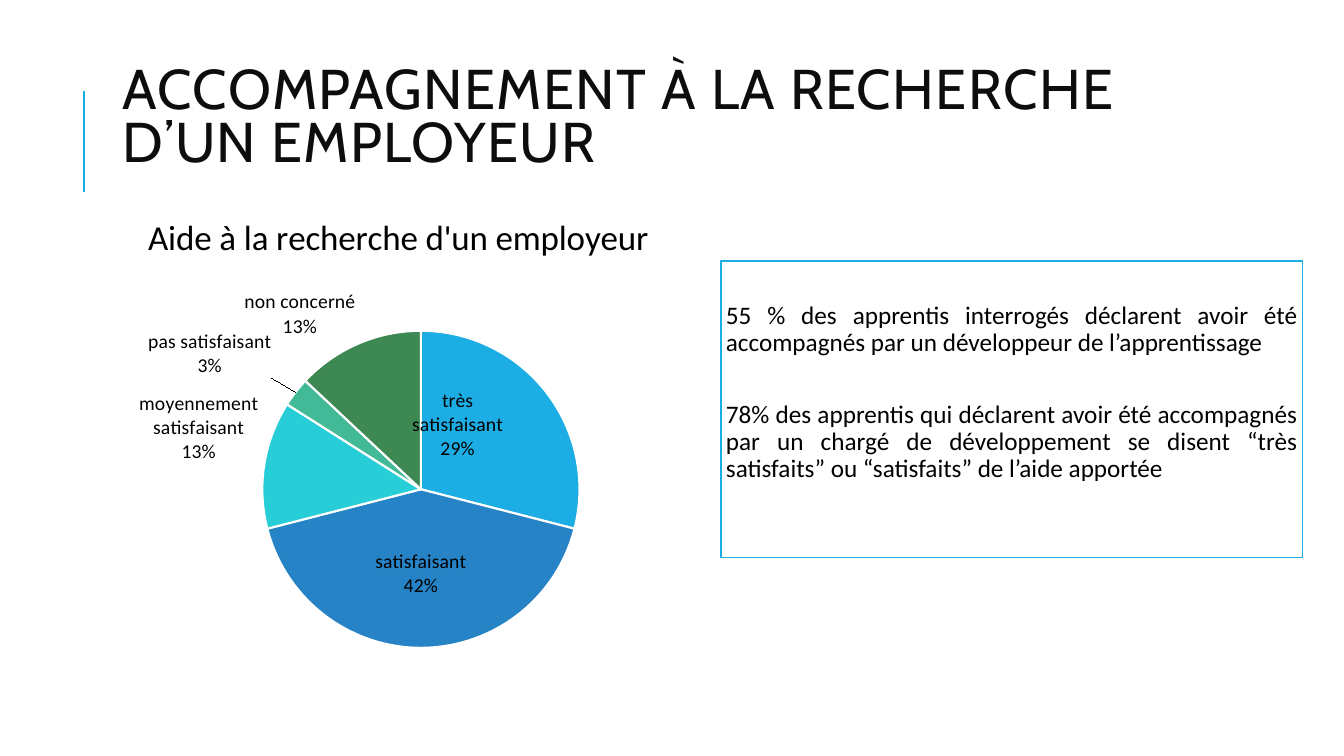
from lxml.etree import SubElement
from pptx import Presentation
from pptx.chart.data import CategoryChartData
from pptx.dml.color import RGBColor
from pptx.enum.chart import XL_CHART_TYPE, XL_LABEL_POSITION
from pptx.enum.shapes import MSO_CONNECTOR, MSO_SHAPE
from pptx.enum.text import MSO_ANCHOR, PP_ALIGN
from pptx.oxml import parse_xml
from pptx.oxml.ns import nsdecls, qn
from pptx.util import Inches, Pt

ACCENT = "1CADE4"
INSIDE, OUTSIDE = XL_LABEL_POSITION.CENTER, XL_LABEL_POSITION.OUTSIDE_END
ANSWERS = [
    ("très satisfaisant", 0.29, "1CADE4", INSIDE, (-0.04, -0.03)),
    ("satisfaisant", 0.42, "2683C6", INSIDE, (0, 0.01)),
    ("moyennement satisfaisant", 0.13, "27CED7", OUTSIDE, None),
    ("pas satisfaisant", 0.03, "42BA97", OUTSIDE, (-0.03, -0.02)),
    ("non concerné", 0.13, "3E8853", OUTSIDE, None),
]
FINDINGS = [
    "55 % des apprentis interrogés déclarent avoir été accompagnés par un "
    "développeur de l’apprentissage",
    "78% des apprentis qui déclarent avoir été accompagnés par un chargé de "
    "développement se disent “très satisfaits” ou “satisfaits” de l’aide apportée",
]


def color(code):
    """Turn a hex string into a colour."""
    return RGBColor.from_string(code)


def style_font(font, size, name="Calibri", code="000000"):
    """Set the face, size and colour of a font."""
    font.name, font.size, font.bold = name, Pt(size), False
    font.color.rgb = color(code)


def write_paragraph(para, text, *, size, name="Calibri", code="000000", align=PP_ALIGN.LEFT,
                    line=0.9, before=0, after=0, tracking=0):
    """Fill a paragraph with one formatted span."""
    para.alignment, para.line_spacing = align, line
    para.space_before, para.space_after = Pt(before), Pt(after)
    span = para.add_run()
    span.text = text
    style_font(span.font, size, name, code)
    if tracking:
        span.font._element.set("spc", str(tracking * 100))


def add_title(page, text):
    """Add the heading and its accent rule."""
    rule = page.shapes.add_connector(
        MSO_CONNECTOR.STRAIGHT, Inches(0.83), Inches(1.9), Inches(0.83), Inches(0.9))
    rule.line.color.rgb, rule.line.width = color(ACCENT), Pt(1.5)
    SubElement(rule._element.spPr, qn("a:effectLst"))
    box = page.shapes.add_textbox(Inches(1.12), Inches(0.37), Inches(10.63), Inches(1.64))
    frame = box.text_frame
    frame.word_wrap, frame.vertical_anchor = True, MSO_ANCHOR.MIDDLE
    write_paragraph(frame.paragraphs[0], text, size=40, name="Cabin", code="0D0D0D",
                    line=0.8, tracking=1)


def add_findings(page, findings):
    """Add the outlined box of findings."""
    box = page.shapes.add_shape(
        MSO_SHAPE.RECTANGLE, Inches(7.15), Inches(2.59), Inches(5.77), Inches(2.94))
    box.shadow.inherit = False
    box.fill.solid()
    box.fill.fore_color.rgb = color("FFFFFF")
    box.line.color.rgb, box.line.width = color(ACCENT), Pt(1.25)
    frame = box.text_frame
    frame.word_wrap, frame.vertical_anchor = True, MSO_ANCHOR.TOP
    frame.margin_left = frame.margin_right = frame.margin_bottom = Inches(0.05)
    frame.margin_top = Inches(0.41)
    for index, text in enumerate(findings):
        para = frame.add_paragraph() if index else frame.paragraphs[0]
        write_paragraph(para, text, size=18, align=PP_ALIGN.JUSTIFY,
                        before=26 if index else 0, after=6)


def manual_layout(x, y, width=None, height=None):
    """Build a chart layout, as an offset or as a full inner area."""
    parts = [("x", x), ("y", y)]
    if width:
        parts = [("layoutTarget", "inner"), ("xMode", "edge"), ("yMode", "edge"),
                 *parts, ("w", width), ("h", height)]
    body = "".join(f'<c:{tag} val="{value}"/>' for tag, value in parts)
    return parse_xml(
        f'<c:layout {nsdecls("c")}><c:manualLayout>{body}</c:manualLayout></c:layout>')


def label_slice(label, position, offset):
    """Show category and value on a slice, moved by the offset."""
    style_font(label.font, 14)
    label.position = position
    element = label._dLbl
    element.find(qn("c:showCatName")).set("val", "1")
    element.find(qn("c:showVal")).set("val", "1")
    element.find(qn("c:showPercent")).set("val", "0")
    SubElement(element, qn("c:separator")).text = "\n"
    if offset:
        element.find(qn("c:idx")).addnext(manual_layout(*offset))


def add_pie(page, title, answers):
    """Add the pie chart of answers."""
    data = CategoryChartData(number_format="0%")
    data.categories = [answer[0] for answer in answers]
    data.add_series("Series 1", [answer[1] for answer in answers])
    chart = page.shapes.add_chart(
        XL_CHART_TYPE.PIE, Inches(0.74), Inches(1.9), Inches(6.42), Inches(5.23), data).chart
    style_font(chart.font, 10)
    chart.has_legend = False
    heading = chart.chart_title.text_frame
    heading.text = title
    style_font(heading.paragraphs[0].runs[0].font, 25)
    title_layout = manual_layout(0.11, 0.05)
    area = title_layout[0]
    for tag in ("yMode", "xMode"):
        mode = SubElement(area, qn(f"c:{tag}"))
        mode.set("val", "edge")
        area.insert(0, mode)
    chart.chart_title._element.find(qn("c:tx")).addnext(title_layout)
    plot = chart.plots[0]
    plot.vary_by_categories = True
    plot_area = plot._element.getparent()
    for old in plot_area.findall(qn("c:layout")):
        plot_area.remove(old)
    plot_area.insert(0, manual_layout(0.29, 0.26, 0.49, 0.61))
    series = plot.series[0]
    labels = series.data_labels
    style_font(labels.font, 14)
    labels.show_value = labels.show_category_name = True
    labels.number_format, labels.number_format_is_linked = "0%", False
    for index, (_, _, fill, position, offset) in enumerate(answers):
        point = series.points[index]
        point.format.fill.solid()
        point.format.fill.fore_color.rgb = color(fill)
        point.format.line.color.rgb = color("FFFFFF")
        point.format.line.width = Pt(1.5)
        label_slice(point.data_label, position, offset)


def main():
    """Build and save the slide."""
    deck = Presentation()
    deck.slide_width, deck.slide_height = Inches(13.33), Inches(7.5)
    page = deck.slides.add_slide(deck.slide_layouts[6])
    add_title(page, "ACCOMPAGNEMENT À LA RECHERCHE D’UN EMPLOYEUR")
    add_findings(page, FINDINGS)
    add_pie(page, "Aide à la recherche d'un employeur", ANSWERS)
    deck.save("out.pptx")


if __name__ == "__main__":
    main()
